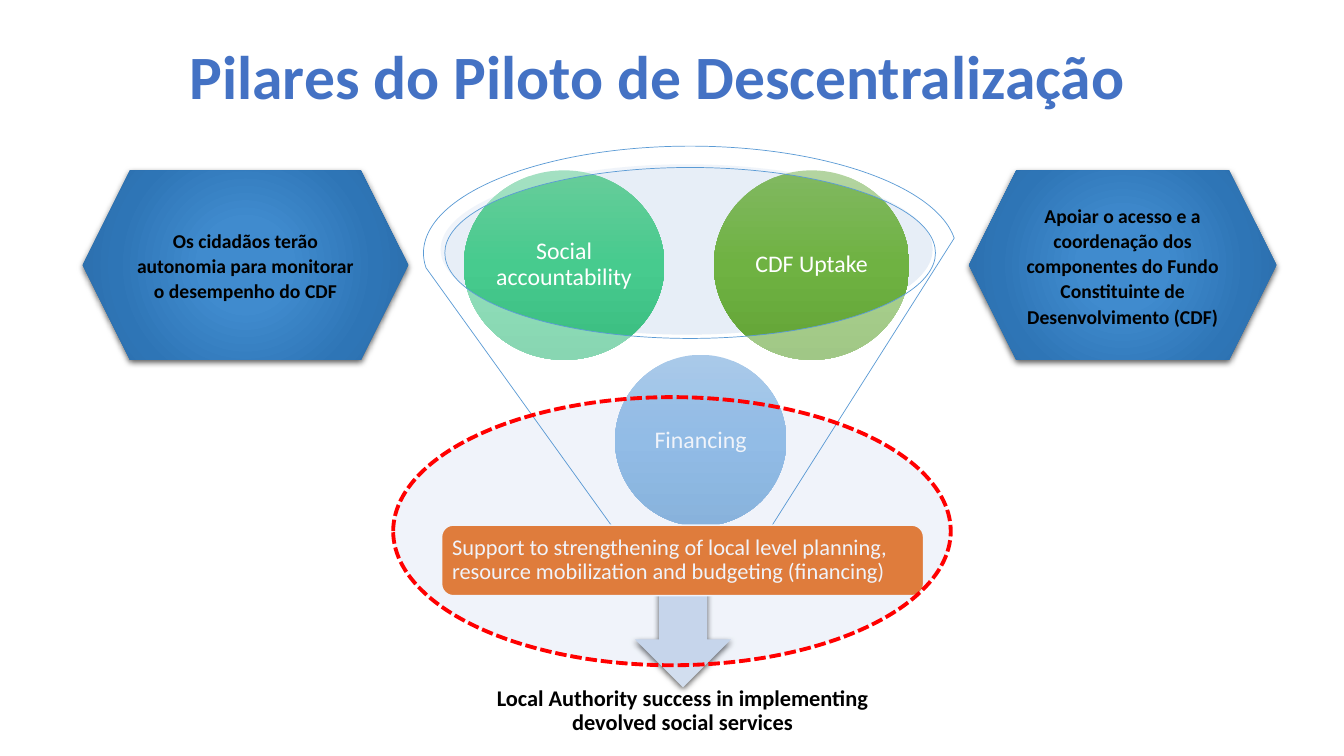
from dataclasses import dataclass

from pptx import Presentation
from pptx.dml.color import RGBColor
from pptx.enum.dml import MSO_LINE
from pptx.enum.shapes import MSO_SHAPE
from pptx.enum.text import MSO_ANCHOR, PP_ALIGN
from pptx.oxml import parse_xml
from pptx.oxml.ns import nsdecls, qn
from pptx.oxml.xmlchemy import OxmlElement
from pptx.util import Inches, Pt


@dataclass(frozen=True)
class Theme:
    """Colours, gradients and type sizes of the slide."""

    font: str = "Calibri"
    blue: str = "4472C4"
    outline: str = "5B9BD5"
    mouth: str = "C4D5EB"
    arrow: str = "D2DEEF"
    orange: str = "ED7D31"
    red: str = "FF0000"
    white: str = "FFFFFF"
    black: str = "000000"
    financing: tuple = ((0, "71A6DB"), (50, "559BDB"), (100, "448ACA"))
    social: tuple = ((0, "67CC9A"), (50, "47CB8E"), (100, "39BB7F"))
    uptake: tuple = ((0, "81B861"), (50, "6FB242"), (100, "62A336"))
    hexagon: tuple = ((0, "408BCE"), (23, "408BCE"), (69, "2E75B6"), (97, "2B6DA9"))
    title_size: int = 44
    circle_size: int = 17
    body_size: int = 16
    hexagon_size: int = 14


THEME = Theme()
LINEAR = '<a:lin ang="5400000" scaled="0"/>'
RADIAL = '<a:path path="circle"><a:fillToRect l="50000" t="50000" r="50000" b="50000"/></a:path>'


def write_text(box, text, size, color, bold=False, align=PP_ALIGN.CENTER,
               inset=(0.1, 0.05), spacing=0.9, after=0):
    """Write one formatted paragraph into a shape or text box."""
    frame = box.text_frame
    across, down = (Inches(value) for value in inset)
    frame_format = {
        "word_wrap": True, "vertical_anchor": MSO_ANCHOR.MIDDLE,
        "margin_left": across, "margin_right": across,
        "margin_top": down, "margin_bottom": down,
    }
    para = frame.paragraphs[0]
    span = para.add_run()
    para_format = {"alignment": align, "line_spacing": spacing, "space_after": Pt(after)}
    font_format = {"name": THEME.font, "size": Pt(size), "bold": bold}
    for target, values in ((frame, frame_format), (para, para_format), (span.font, font_format)):
        for name, value in values.items():
            setattr(target, name, value)
    span.text = text
    span.font.color.rgb = RGBColor.from_string(color)


def add_text(page, place, text, size, color, **style):
    """Add a text box holding one paragraph."""
    box = page.shapes.add_textbox(*map(Inches, place))
    write_text(box, text, size, color, **style)


def add_figure(page, kind, place, fill, alpha=100, line=None, width=1, dash=None):
    """Add a preset shape with a flat fill and an optional outline."""
    shape = page.shapes.add_shape(kind, *map(Inches, place))
    shape.shadow.inherit = False
    shape.fill.solid()
    shape.fill.fore_color.rgb = RGBColor.from_string(fill)
    if alpha < 100:
        opacity = OxmlElement("a:alpha")
        opacity.set("val", str(alpha * 1000))
        shape.fill._xPr.find(qn("a:solidFill"))[0].append(opacity)
    if line:
        shape.line.color.rgb = RGBColor.from_string(line)
        shape.line.width = Pt(width)
        shape.line.dash_style = dash
    else:
        shape.line.fill.background()
    return shape


def apply_gradient(shape, stops, direction):
    """Replace the flat fill of a shape by a gradient."""
    marks = "".join(
        f'<a:gs pos="{position * 1000}"><a:srgbClr val="{color}"/></a:gs>'
        for position, color in stops
    )
    gradient = parse_xml(
        f'<a:gradFill {nsdecls("a")} rotWithShape="1">'
        f"<a:gsLst>{marks}</a:gsLst>{direction}</a:gradFill>"
    )
    properties = shape._element.spPr
    properties.replace(properties.find(qn("a:solidFill")), gradient)


def apply_shadow(shape):
    """Give a shape a soft shadow straight below it."""
    shadow = parse_xml(
        f'<a:outerShdw {nsdecls("a")} blurRad="{Pt(4.5)}" dist="{Pt(1.5)}" dir="5400000"'
        f' algn="ctr" rotWithShape="0"><a:srgbClr val="{THEME.black}">'
        '<a:alpha val="63000"/></a:srgbClr></a:outerShdw>'
    )
    shape._element.spPr.find(qn("a:effectLst")).append(shadow)


def add_circle(page, place, stops, text):
    """Add a pillar of the funnel with its label."""
    circle = add_figure(page, MSO_SHAPE.OVAL, place, THEME.white)
    apply_gradient(circle, stops, LINEAR)
    write_text(circle, text, THEME.circle_size, THEME.white, inset=(0.02, 0.02))


def add_hexagon(page, place, text):
    """Add an explanatory hexagon beside the funnel."""
    hexagon = add_figure(page, MSO_SHAPE.HEXAGON, place, THEME.white)
    apply_gradient(hexagon, THEME.hexagon, RADIAL)
    apply_shadow(hexagon)
    write_text(hexagon, text, THEME.hexagon_size, THEME.black,
               bold=True, spacing=1.07, after=8)


def main():
    """Build the slide and save it."""
    deck = Presentation()
    deck.slide_width, deck.slide_height = Inches(13.33), Inches(7.5)
    page = deck.slides.add_slide(deck.slide_layouts[6])

    add_text(page, (1.31, 0.26, 10.43, 1.06), "Pilares do Piloto de Descentralização",
             THEME.title_size, THEME.blue, bold=True)

    add_figure(page, MSO_SHAPE.OVAL, (4.37, 1.63, 4.88, 1.69), THEME.mouth, alpha=40)
    arrow = add_figure(page, MSO_SHAPE.DOWN_ARROW, (6.3, 5.46, 0.95, 1.36), THEME.arrow)
    apply_shadow(arrow)
    add_text(page, (4.5, 6.76, 4.54, 0.6),
             "Local Authority success in implementing devolved social services",
             THEME.body_size, THEME.black, bold=True, inset=(0.12, 0))

    circles = (
        ((6.1, 3.52, 1.7, 1.7), THEME.financing, "Financing"),
        ((4.6, 1.69, 1.99, 1.88), THEME.social, "Social accountability"),
        ((7.08, 1.69, 1.94, 1.88), THEME.uptake, "CDF Uptake"),
    )
    for place, stops, text in circles:
        add_circle(page, place, stops, text)
    add_figure(page, MSO_SHAPE.FUNNEL, (4.2, 1.45, 5.29, 4.24), THEME.white,
               alpha=40, line=THEME.outline, width=0.5)

    hexagons = (
        (0.82, 3.23, "Os cidadãos terão autonomia para monitorar o desempenho do CDF"),
        (9.61, 3.05, "Apoiar o acesso e a coordenação dos componentes do Fundo "
                     "Constituinte de Desenvolvimento (CDF)"),
    )
    for left, width, text in hexagons:
        add_hexagon(page, (left, 1.69, width, 1.88), text)

    support = add_figure(page, MSO_SHAPE.ROUNDED_RECTANGLE, (4.38, 5.21, 4.78, 0.7),
                         THEME.orange, line=THEME.white)
    write_text(support, "Support to strengthening of local level planning, "
               "resource mobilization and budgeting (financing)",
               THEME.body_size, THEME.white, align=PP_ALIGN.LEFT, inset=(0.07, 0.07))
    add_figure(page, MSO_SHAPE.OVAL, (3.9, 3.94, 5.53, 2.66), THEME.blue, alpha=8,
               line=THEME.red, width=2.75, dash=MSO_LINE.SQUARE_DOT)

    deck.save("out.pptx")


if __name__ == "__main__":
    main()
